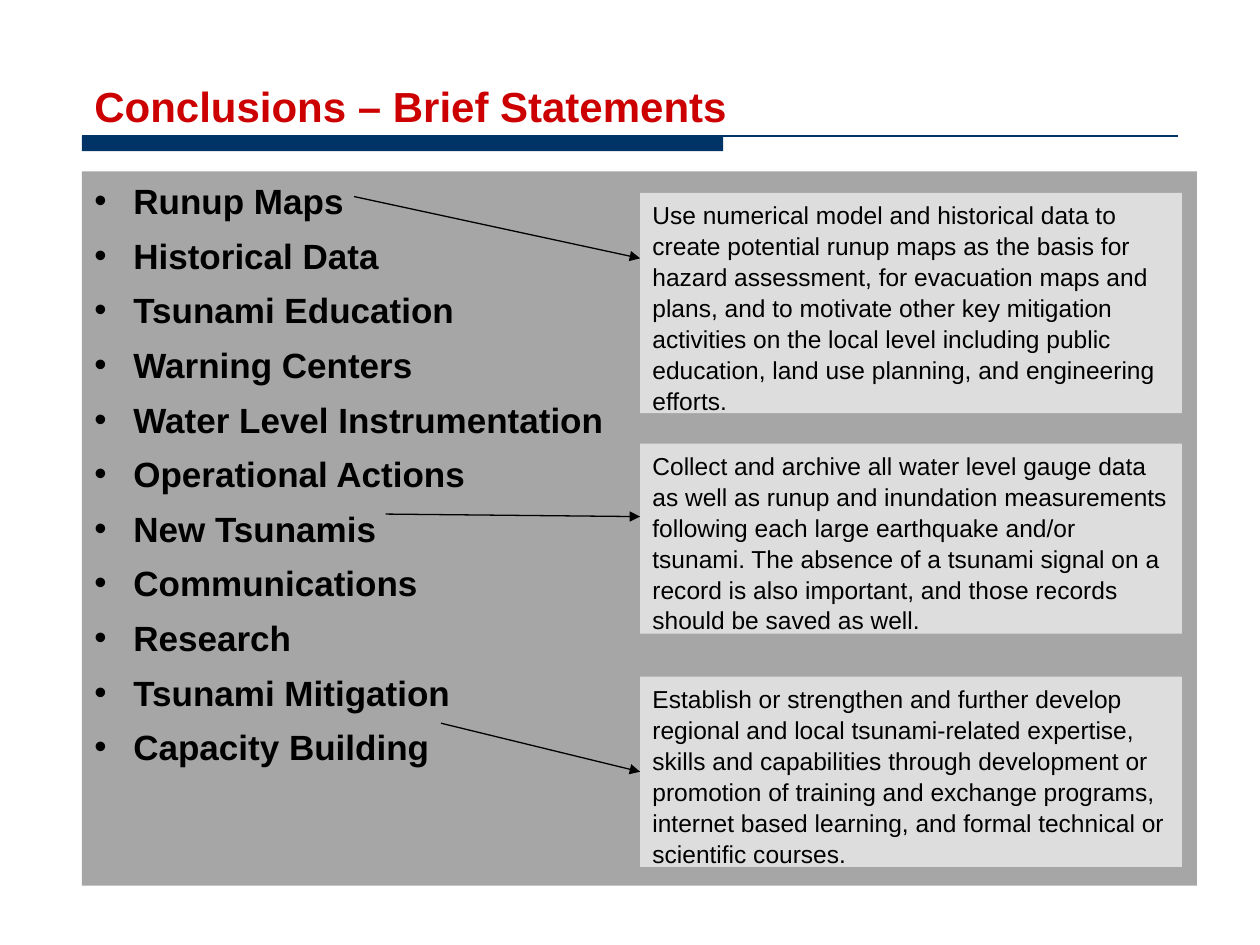
from pptx import Presentation, util as u
from pptx.dml import color
from pptx.enum import shapes, text
from pptx.oxml import ns
from lxml import etree

COLS, ROWS = 100, 75
WIDE, HIGH = u.Inches(10), u.Inches(7.5)
NAVY, RED, BLACK, GREY, PALE = "003366", "CC0000", "000000", "A6A6A6", "DDDDDD"

TOPICS = [
    "Runup Maps", "Historical Data", "Tsunami Education", "Warning Centers",
    "Water Level Instrumentation", "Operational Actions", "New Tsunamis",
    "Communications", "Research", "Tsunami Mitigation", "Capacity Building",
]
NOTES = [
    ("Use numerical model and historical data to create potential runup maps "
     "as the basis for hazard assessment, for evacuation maps and plans, and "
     "to motivate other key mitigation activities on the local level including "
     "public education, land use planning, and engineering efforts.",
     15.3, 17.5, (28.1, 15.6), 20.5),
    ("Collect and archive all water level gauge data as well as runup and "
     "inundation measurements following each large earthquake and/or tsunami. "
     "The absence of a tsunami signal on a record is also important, and those "
     "records should be saved as well.",
     35.2, 15.1, (30.6, 40.8), 41),
    ("Establish or strengthen and further develop regional and local "
     "tsunami-related expertise, skills and capabilities through development "
     "or promotion of training and exchange programs, internet based learning, "
     "and formal technical or scientific courses.",
     53.7, 15.1, (35, 57.4), None),
]


def across(cols):
    return round(WIDE * cols / COLS)


def down(rows):
    return round(HIGH * rows / ROWS)


def span(box):
    x, y, w, h = box
    return across(x), down(y), across(w), down(h)


def paint(part, tone):
    part.fill.solid()
    part.fill.fore_color.rgb = color.RGBColor.from_string(tone)


def panel(slide, box, tone):
    rect = slide.shapes.add_shape(shapes.MSO_SHAPE.RECTANGLE, *span(box))
    rect.shadow.inherit = False
    paint(rect, tone)
    rect.line.fill.background()
    return rect


def rule(slide, start, end, tone, arrow=False):
    line = slide.shapes.add_connector(
        shapes.MSO_CONNECTOR.STRAIGHT,
        across(start[0]), down(start[1]), across(end[0]), down(end[1]))
    line.line.width = u.Pt(0.75)
    paint(line.line, tone)
    if arrow:
        tip = etree.SubElement(line.line._get_or_add_ln(), ns.qn("a:tailEnd"))
        tip.set("type", "triangle")
    etree.SubElement(line._element.spPr, ns.qn("a:effectLst"))
    return line


def write(shape, words, size, tone, bold=False, lead=1.05, anchor="TOP"):
    frame = shape.text_frame
    frame.word_wrap = True
    frame.vertical_anchor = getattr(text.MSO_ANCHOR, anchor)
    frame.text = words
    for para in frame.paragraphs:
        para.alignment = text.PP_ALIGN.LEFT
        para.line_spacing = lead
        for run in para.runs:
            run.font.name = "Arial"
            run.font.size = u.Pt(size)
            run.font.bold = bold
            run.font.color.rgb = color.RGBColor.from_string(tone)
    return frame


def header(slide, box):
    x, y, w, h = box
    base = y + h
    panel(slide, (x, base - 0.1, 50.9, 1.2), NAVY)
    rule(slide, (x, base - 0.1), (x + 87, base - 0.1), NAVY)
    title = slide.shapes.add_textbox(*span(box))
    write(title, "Conclusions – Brief Statements", 24, RED, True, 1.1, "BOTTOM")


def topics(slide, box):
    frame = write(panel(slide, box, GREY), "\n".join(TOPICS), 20, BLACK, True)
    for para in frame.paragraphs:
        para.space_before = u.Pt(6)
        props = para._p.get_or_add_pPr()
        props.set("marL", str(across(3.1)))
        props.set("indent", str(-across(3.1)))
        font = etree.SubElement(props, ns.qn("a:buFont"))
        font.set("typeface", "Arial")
        mark = etree.SubElement(props, ns.qn("a:buChar"))
        mark.set("char", "•")


def note(slide, box, words, start, mid):
    card = panel(slide, box, PALE)
    write(card, words, 14, BLACK)
    x, y, w, h = box
    end = y + h / 2 if mid is None else mid
    line = rule(slide, start, (x, end), BLACK, True)
    if mid is None:
        line.end_connect(card, 1)


def main():
    deck = Presentation()
    deck.slide_width, deck.slide_height = WIDE, HIGH
    slide = deck.slides.add_slide(deck.slide_layouts[6])
    header(slide, (6.5, 1.7, 88.5, 9.2))
    topics(slide, (6.5, 13.6, 88.5, 56.7))
    for words, top, tall, start, mid in NOTES:
        note(slide, (50.8, top, 43, tall), words, start, mid)
    deck.save("out.pptx")


if __name__ == "__main__":
    main()
